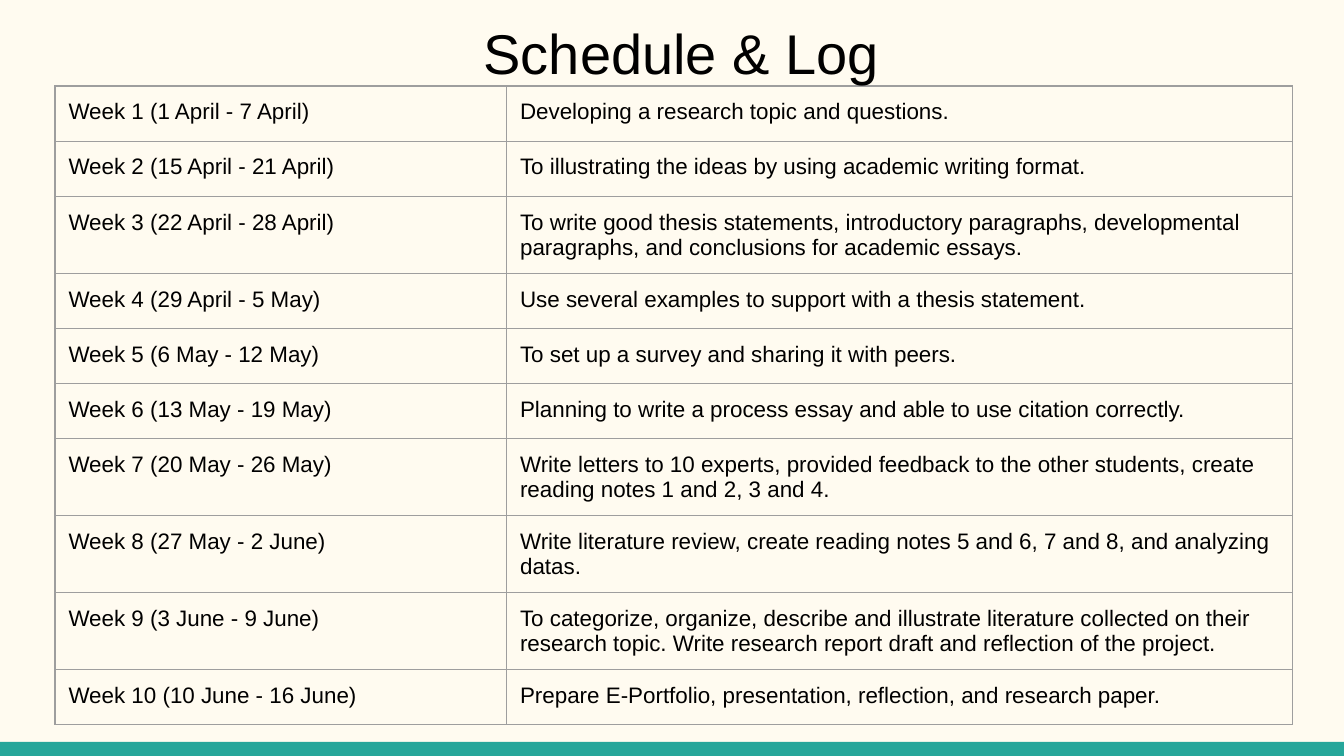
import pptx
import pptx.util
import pptx.dml.color
import pptx.enum.shapes
import pptx.enum.text
from dataclasses import dataclass
from lxml import etree
from pptx.oxml.ns import qn
from pptx.util import Inches


@dataclass(frozen=True)
class Theme:
    font: str = "Arial"
    background: str = "FFFBF0"
    accent: str = "26A69A"
    text: str = "000000"
    border: str = "9E9E9E"
    title_size: float = 30
    body_size: float = 12
    border_width: float = 0.75


THEME = Theme()
WIDTH = 10
HEIGHT = WIDTH * 9 / 16
COLUMNS = (3.36, 5.85)
ONE_LINE, TWO_LINES = 0.41, 0.57
LINE_CHARS = 75  # longest task that fits on one line

SCHEDULE = [
    ("Week 1 (1 April - 7 April)", "Developing a research topic and questions."),
    ("Week 2 (15 April - 21 April)",
     "To illustrating the ideas by using academic writing format."),
    ("Week 3 (22 April - 28 April)",
     "To write good thesis statements, introductory paragraphs, developmental "
     "paragraphs, and conclusions for academic essays."),
    ("Week 4 (29 April - 5 May)",
     "Use several examples to support with a thesis statement."),
    ("Week 5 (6 May - 12 May)", "To set up a survey and sharing it with peers."),
    ("Week 6 (13 May - 19 May)",
     "Planning to write a process essay and able to use citation correctly."),
    ("Week 7 (20 May - 26 May)",
     "Write letters to 10 experts, provided feedback to the other students, "
     "create reading notes 1 and 2, 3 and 4."),
    ("Week 8 (27 May - 2 June)",
     "Write literature review, create reading notes 5 and 6, 7 and 8, "
     "and analyzing datas."),
    ("Week 9 (3 June - 9 June)",
     "To categorize, organize, describe and illustrate literature collected on "
     "their research topic. Write research report draft and reflection of the "
     "project."),
    ("Week 10 (10 June - 16 June)",
     "Prepare E-Portfolio, presentation, reflection, and research paper."),
]


def rgb(color):
    return pptx.dml.color.RGBColor.from_string(color)


def write(tf, text, size=THEME.body_size, color=THEME.text, align=None):
    tf.word_wrap = True
    p = tf.paragraphs[0]
    p.alignment = align
    r = p.add_run()
    r.text = text
    r.font.name = THEME.font
    r.font.size = pptx.util.Pt(size)
    r.font.color.rgb = rgb(color)


def set_insets(box, inset=0.1):
    box.margin_left = box.margin_right = Inches(inset)
    box.margin_top = box.margin_bottom = Inches(inset)


def set_borders(cell):
    tcPr = cell._tc.get_or_add_tcPr()
    # Border lines must come before the fill
    for i, side in enumerate(("lnL", "lnR", "lnT", "lnB")):
        ln = etree.Element(qn(f"a:{side}"),
                           w=str(pptx.util.Pt(THEME.border_width)))
        fill = etree.SubElement(ln, qn("a:solidFill"))
        etree.SubElement(fill, qn("a:srgbClr"), val=THEME.border)
        tcPr.insert(i, ln)


def add_footer_bar(s):
    bar = s.shapes.add_shape(pptx.enum.shapes.MSO_SHAPE.RECTANGLE,
                             Inches(0), Inches(5.52),
                             Inches(WIDTH), Inches(HEIGHT - 5.52))
    bar.shadow.inherit = False
    bar.fill.solid()
    bar.fill.fore_color.rgb = rgb(THEME.accent)
    bar.line.fill.background()


def add_schedule(s):
    heights = [TWO_LINES if len(task) > LINE_CHARS else ONE_LINE
               for _, task in SCHEDULE]
    table = s.shapes.add_table(len(SCHEDULE), len(COLUMNS),
                               Inches(0.41), Inches(0.64),
                               Inches(sum(COLUMNS)), Inches(sum(heights))).table
    table.first_row = table.horz_banding = False
    for column, width in zip(table.columns, COLUMNS):
        column.width = Inches(width)
    for row, height, entry in zip(table.rows, heights, SCHEDULE):
        row.height = Inches(height)
        for cell, text in zip(row.cells, entry):
            set_insets(cell)
            cell.fill.background()
            set_borders(cell)
            write(cell.text_frame, text)


def format_title(s, text):
    sp = s.shapes.title
    sp.left, sp.top = Inches(0.41), Inches(0.04)
    sp.width, sp.height = Inches(9.32), Inches(0.67)
    tf = sp.text_frame
    tf.auto_size = pptx.enum.text.MSO_AUTO_SIZE.NONE
    tf.vertical_anchor = pptx.enum.text.MSO_ANCHOR.TOP
    set_insets(tf)
    write(tf, text, size=THEME.title_size, align=pptx.enum.text.PP_ALIGN.CENTER)
    # Keep the title in front of the table
    s.shapes._spTree.append(sp._element)


def main():
    prs = pptx.Presentation()
    prs.slide_width, prs.slide_height = Inches(WIDTH), Inches(HEIGHT)
    s = prs.slides.add_slide(prs.slide_layouts[5])
    s.background.fill.solid()
    s.background.fill.fore_color.rgb = rgb(THEME.background)
    add_footer_bar(s)
    add_schedule(s)
    format_title(s, "Schedule & Log")
    prs.save("out.pptx")


if __name__ == "__main__":
    main()
